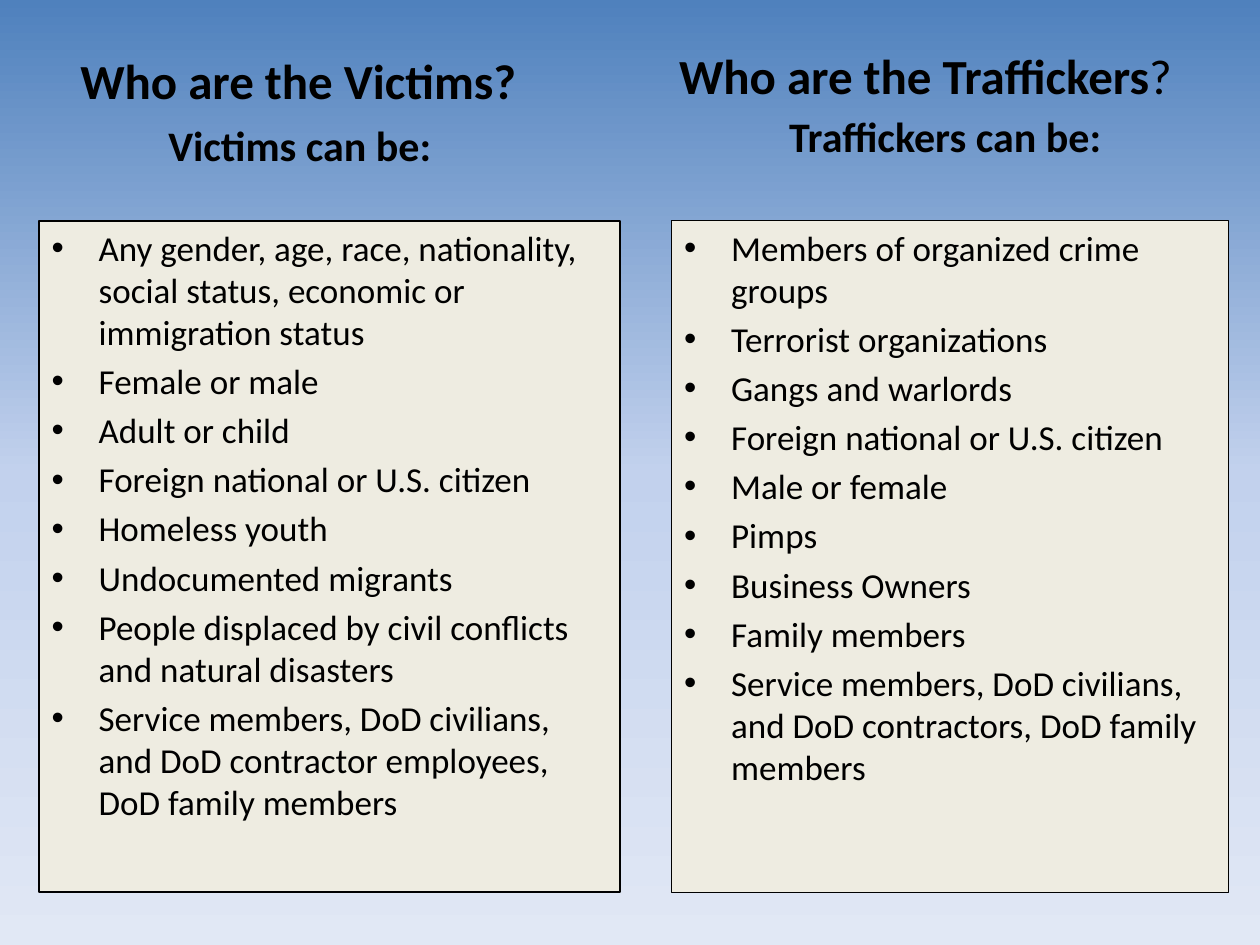
from copy import deepcopy
from dataclasses import dataclass

from pptx import Presentation
from pptx.dml.color import RGBColor
from pptx.enum.shapes import MSO_SHAPE
from pptx.enum.text import MSO_ANCHOR, PP_ALIGN
from pptx.oxml.ns import qn
from pptx.util import Cm, Pt

RECT = MSO_SHAPE.RECTANGLE
TOP, BOTTOM = MSO_ANCHOR.TOP, MSO_ANCHOR.BOTTOM
LEFT, CENTER = PP_ALIGN.LEFT, PP_ALIGN.CENTER


@dataclass(frozen=True)
class Theme:
    font: str = "Calibri"
    ink: str = "000000"
    panel: str = "EEECE1"
    sky: tuple = ((0, "4F81BD"), (0.5, "C2D1ED"), (1, "E1E8F5"))
    title_size: int = 28
    subtitle_size: int = 24
    item_size: int = 20
    item_gap: int = 4
    item_indent: float = 0.95


@dataclass(frozen=True)
class Box:
    left: float
    top: float
    width: float
    height: float

    def emu(self) -> tuple:
        return Cm(self.left), Cm(self.top), Cm(self.width), Cm(self.height)


@dataclass(frozen=True)
class Column:
    title: tuple
    title_box: Box
    subtitle: str
    subtitle_box: Box
    items: tuple
    panel_box: Box
    border: float


THEME = Theme()
PANEL_TOP, PANEL_HEIGHT = 4.45, 13.54

COLUMNS = (
    Column(
        (("Who are the Victims?", True),), Box(1.37, 0.89, 10.54, 1.4),
        "Victims can be:", Box(0.43, 2.29, 11.23, 1.27),
        (
            "Any gender, age, race, nationality, social status, economic or immigration status",
            "Female or male",
            "Adult or child",
            "Foreign national or U.S. citizen",
            "Homeless youth",
            "Undocumented migrants",
            "People displaced by civil conflicts and natural disasters",
            "Service members, DoD civilians, and DoD contractor employees, DoD family members",
        ),
        Box(0.79, PANEL_TOP, 11.71, PANEL_HEIGHT), 1,
    ),
    Column(
        (("Who are the Traffickers", True), ("?", False)), Box(13.44, 0.79, 11.43, 1.45),
        "Traffickers can be:", Box(13.44, 2.34, 11.23, 1.02),
        (
            "Members of organized crime groups",
            "Terrorist organizations",
            "Gangs and warlords",
            "Foreign national or U.S. citizen",
            "Male or female",
            "Pimps",
            "Business Owners",
            "Family members",
            "Service members, DoD civilians, and DoD contractors, DoD family members",
        ),
        Box(13.54, PANEL_TOP, 11.23, PANEL_HEIGHT), 0.25,
    ),
)


def add_run(p, text: str, *, size: int, bold: bool = False) -> None:
    r = p.add_run()
    r.text = text
    r.font.name = THEME.font
    r.font.size = Pt(size)
    r.font.bold = bold
    r.font.color.rgb = RGBColor.from_string(THEME.ink)


def add_heading(s, box: Box, runs: tuple, *, size: int, align=LEFT, anchor=TOP) -> None:
    tf = s.shapes.add_textbox(*box.emu()).text_frame
    tf.word_wrap = True
    tf.vertical_anchor = anchor
    p = tf.paragraphs[0]
    p.alignment = align
    for text, bold in runs:
        add_run(p, text, size=size, bold=bold)


def add_bullet(p) -> None:
    pPr = p._p.get_or_add_pPr()
    indent = Cm(THEME.item_indent)
    pPr.set("marL", str(indent))
    pPr.set("indent", str(-indent))
    font = pPr.makeelement(qn("a:buFont"), {"typeface": "Arial"})
    char = pPr.makeelement(qn("a:buChar"), {"char": "•"})
    pPr.extend((font, char))


def add_panel(s, box: Box, items: tuple, *, border: float) -> None:
    sp = s.shapes.add_shape(RECT, *box.emu())
    sp.shadow.inherit = False
    sp.fill.solid()
    sp.fill.fore_color.rgb = RGBColor.from_string(THEME.panel)
    sp.line.color.rgb = RGBColor.from_string(THEME.ink)
    sp.line.width = Pt(border)
    tf = sp.text_frame
    tf.word_wrap = True
    tf.vertical_anchor = TOP
    for i, item in enumerate(items):
        p = tf.add_paragraph() if i else tf.paragraphs[0]
        add_bullet(p)
        p.alignment = LEFT
        p.space_before = Pt(THEME.item_gap if i else 0)
        add_run(p, item, size=THEME.item_size)


def paint_background(s) -> None:
    fill = s.background.fill
    fill.gradient()
    fill.gradient_angle = 270
    stops = s._element.find(".//" + qn("a:gsLst"))
    stops.append(deepcopy(stops[-1]))
    for stop, (position, color) in zip(fill.gradient_stops, THEME.sky):
        stop.position = position
        stop.color.rgb = RGBColor.from_string(color)


def main() -> None:
    prs = Presentation()
    prs.slide_width, prs.slide_height = Cm(25.4), Cm(19.05)
    s = prs.slides.add_slide(prs.slide_layouts[6])
    paint_background(s)
    for column in COLUMNS:
        add_heading(s, column.title_box, column.title, size=THEME.title_size)
        add_heading(s, column.subtitle_box, ((column.subtitle, True),),
                    size=THEME.subtitle_size, align=CENTER, anchor=BOTTOM)
        add_panel(s, column.panel_box, column.items, border=column.border)
    prs.save("out.pptx")


if __name__ == "__main__":
    main()
